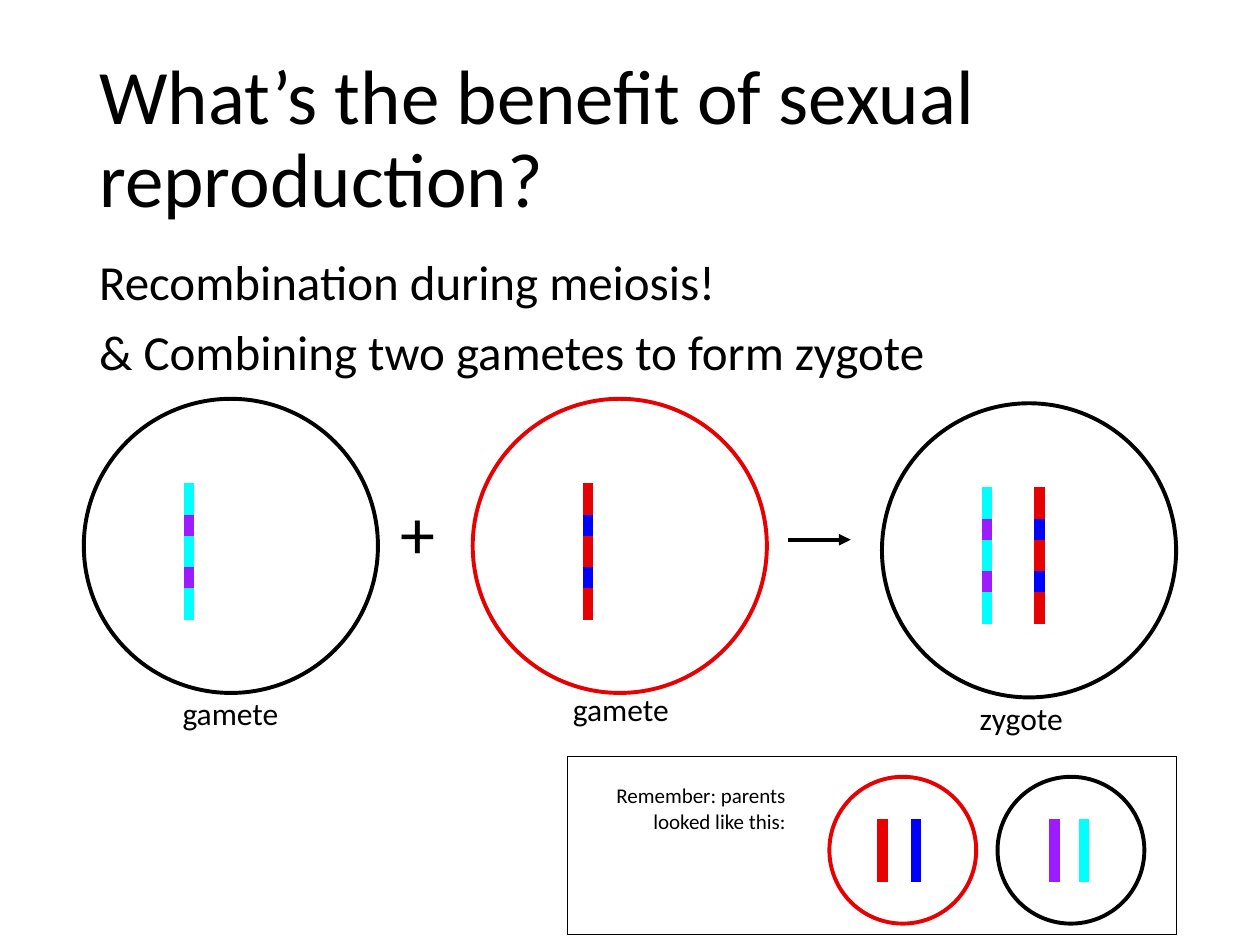
from dataclasses import dataclass

from lxml import etree
from pptx import Presentation
from pptx.dml.color import RGBColor
from pptx.enum.shapes import MSO_CONNECTOR, MSO_SHAPE
from pptx.enum.text import MSO_ANCHOR, MSO_AUTO_SIZE, PP_ALIGN
from pptx.oxml.ns import qn
from pptx.util import Cm, Pt

BLACK = RGBColor(0x00, 0x00, 0x00)
RED = RGBColor(0xE6, 0x02, 0x02)
BLUE = RGBColor(0x00, 0x00, 0xFF)
PURPLE = RGBColor(0x9D, 0x1C, 0xFF)
CYAN = RGBColor(0x00, 0xFF, 0xFF)

ELLIPSE, RECTANGLE = MSO_SHAPE.OVAL, MSO_SHAPE.RECTANGLE
STRAIGHT = MSO_CONNECTOR.STRAIGHT
LEFT, RIGHT = PP_ALIGN.LEFT, PP_ALIGN.RIGHT
TOP, MIDDLE = MSO_ANCHOR.TOP, MSO_ANCHOR.MIDDLE
NO_FIT = MSO_AUTO_SIZE.NONE

FONT = "Calibri"
CELL_SIZE, PARENT_SIZE = 5.93, 2.96
STRAND_LENGTH, PARENT_STRAND_LENGTH = 2.54, 1.27
BAND_LENGTH, BAND_STEP, BAND_COUNT = 0.64, 1.06, 3
CELL_LINE, STRAND_LINE = 2.25, 6


@dataclass(frozen=True)
class Strand:
    """A chromosome; bands, if any, show the recombined pieces."""
    x: float
    color: RGBColor
    bands: RGBColor | None = None


@dataclass(frozen=True)
class Cell:
    x: float
    y: float
    size: float
    color: RGBColor
    strand_top: float
    strand_length: float
    strands: tuple[Strand, ...]


@dataclass(frozen=True)
class Label:
    text: str
    x: float
    y: float
    width: float
    height: float
    size: float
    align: PP_ALIGN = LEFT
    wrap: bool = True


CELLS = (
    Cell(9.53, 8.04, CELL_SIZE, RED, 9.74, STRAND_LENGTH,
         (Strand(11.85, BLUE, RED),)),
    Cell(1.69, 8.04, CELL_SIZE, BLACK, 9.74, STRAND_LENGTH,
         (Strand(3.81, PURPLE, CYAN),)),
    Cell(17.78, 8.13, CELL_SIZE, BLACK, 9.82, STRAND_LENGTH,
         (Strand(19.9, PURPLE, CYAN), Strand(20.96, BLUE, RED))),
    Cell(20.11, 15.66, PARENT_SIZE, BLACK, 16.51, PARENT_STRAND_LENGTH,
         (Strand(21.26, PURPLE), Strand(21.85, CYAN))),
    Cell(16.72, 15.66, PARENT_SIZE, RED, 16.51, PARENT_STRAND_LENGTH,
         (Strand(17.79, RED), Strand(18.47, BLUE))),
)

LABELS = (
    Label("Remember: parents looked like this:", 11.43, 15.66, 4.66, 1.27, 12, RIGHT),
    Label("+", 7.83, 9.74, 1.48, 1.95, 40),
    Label("gamete", 3.43, 13.87, 2.46, 1.02, 18, wrap=False),
    Label("gamete", 11.3, 13.79, 2.46, 1.02, 18, wrap=False),
    Label("zygote", 19.5, 13.97, 2.2, 1.02, 18, wrap=False),
)

BENEFITS = (
    "Recombination during meiosis!",
    "& Combining two gametes to form zygote",
)


def add_outline(slide, kind: MSO_SHAPE, x: float, y: float, width: float,
                height: float, color: RGBColor, weight: float) -> None:
    shape = slide.shapes.add_shape(kind, Cm(x), Cm(y), Cm(width), Cm(height))
    shape.shadow.inherit = False
    shape.fill.background()
    shape.line.color.rgb = color
    shape.line.width = Pt(weight)


def add_line(slide, x1: float, y1: float, x2: float, y2: float,
             color: RGBColor, weight: float, arrow: bool = False) -> None:
    line = slide.shapes.add_connector(STRAIGHT, Cm(x1), Cm(y1), Cm(x2), Cm(y2))
    line.line.color.rgb = color
    line.line.width = Pt(weight)
    if arrow:
        outline = line.line._get_or_add_ln()
        etree.SubElement(outline, qn("a:tailEnd"), type="triangle")
    etree.SubElement(line._element.spPr, qn("a:effectLst"))


def add_cell(slide, cell: Cell) -> None:
    add_outline(slide, ELLIPSE, cell.x, cell.y, cell.size, cell.size,
                cell.color, CELL_LINE)
    for strand in cell.strands:
        add_line(slide, strand.x, cell.strand_top, strand.x,
                 cell.strand_top + cell.strand_length, strand.color, STRAND_LINE)
        if strand.bands is None:
            continue
        for index in range(BAND_COUNT):
            top = cell.strand_top + index * BAND_STEP
            add_line(slide, strand.x, top, strand.x, top + BAND_LENGTH,
                     strand.bands, STRAND_LINE)


def add_run(paragraph, text: str, size: float) -> None:
    run = paragraph.add_run()
    run.text = text
    run.font.name = FONT
    run.font.size = Pt(size)
    run.font.color.rgb = BLACK


def add_label(slide, label: Label) -> None:
    box = slide.shapes.add_textbox(Cm(label.x), Cm(label.y),
                                   Cm(label.width), Cm(label.height))
    box.text_frame.word_wrap = label.wrap
    paragraph = box.text_frame.paragraphs[0]
    paragraph.alignment = label.align
    add_run(paragraph, label.text, label.size)


def fill_title(slide) -> None:
    title = slide.shapes.title
    title.left, title.top, title.width, title.height = Cm(1.75), Cm(1.01), Cm(21.9), Cm(3.68)
    frame = title.text_frame
    frame.word_wrap = True
    frame.auto_size = NO_FIT
    frame.vertical_anchor = MIDDLE
    paragraph = frame.paragraphs[0]
    paragraph.alignment = LEFT
    paragraph.line_spacing = 0.9
    add_run(paragraph, "What’s the benefit of sexual reproduction?", 44)


def add_benefits(slide) -> None:
    frame = slide.shapes.add_textbox(Cm(1.75), Cm(5.08), Cm(21.9), Cm(3.05)).text_frame
    frame.word_wrap = True
    frame.vertical_anchor = TOP
    for index, benefit in enumerate(BENEFITS):
        paragraph = frame.add_paragraph() if index else frame.paragraphs[0]
        paragraph.line_spacing = 0.9
        paragraph.space_before = Pt(10)
        add_run(paragraph, benefit, 28)


def main() -> None:
    presentation = Presentation()
    presentation.slide_width, presentation.slide_height = Cm(25.4), Cm(19.05)
    slide = presentation.slides.add_slide(presentation.slide_layouts[5])
    fill_title(slide)
    add_benefits(slide)
    for cell in CELLS:
        add_cell(slide, cell)
    add_line(slide, 15.88, 10.88, 17.15, 10.88, BLACK, CELL_LINE, arrow=True)
    add_outline(slide, RECTANGLE, 11.43, 15.24, 12.28, 3.6, BLACK, 0.5)
    for label in LABELS:
        add_label(slide, label)
    presentation.save("out.pptx")


if __name__ == "__main__":
    main()
